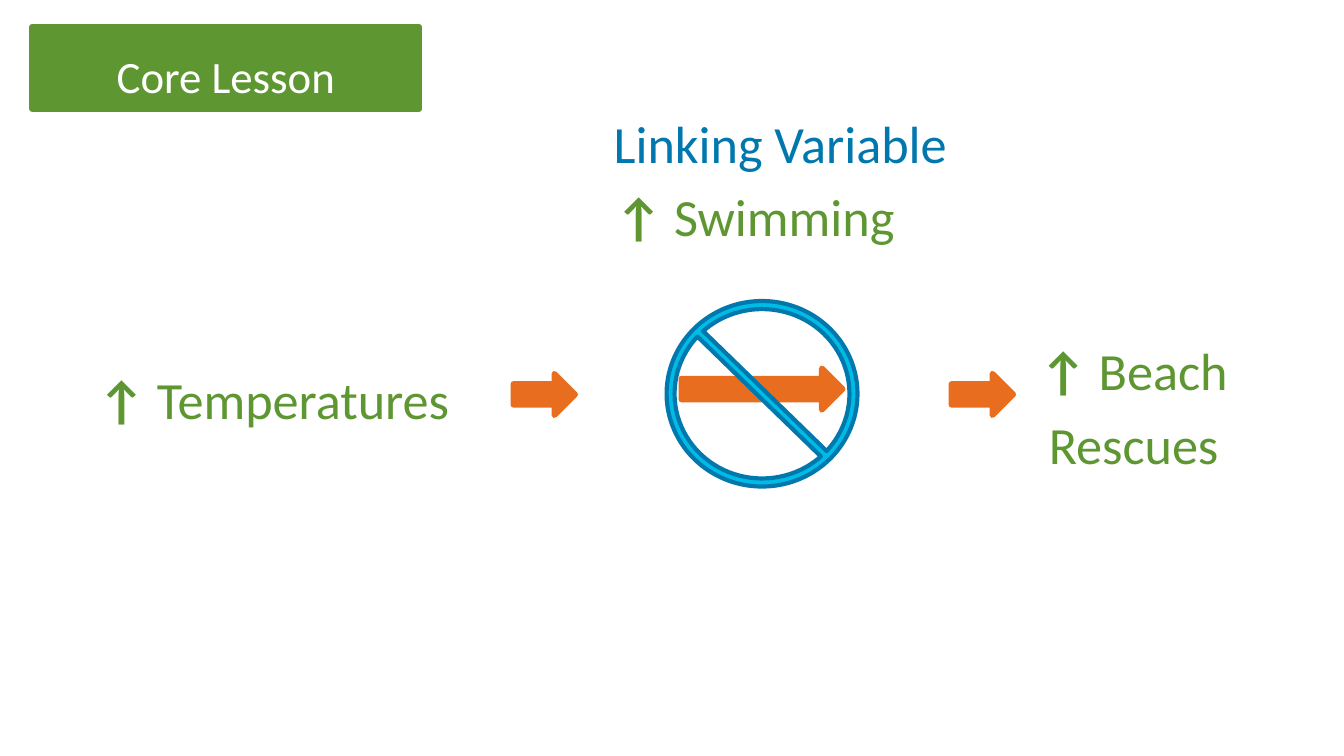
from dataclasses import dataclass

from pptx import Presentation
from pptx.dml.color import RGBColor
from pptx.enum.shapes import MSO_SHAPE
from pptx.enum.text import MSO_ANCHOR, MSO_AUTO_SIZE, PP_ALIGN
from pptx.util import Inches, Pt

RIGHT_ARROW = MSO_SHAPE.RIGHT_ARROW
NO_SYMBOL = MSO_SHAPE.NO_SYMBOL
CENTER = PP_ALIGN.CENTER
BOTTOM = MSO_ANCHOR.BOTTOM
NO_AUTOFIT = MSO_AUTO_SIZE.NONE
TITLE_ONLY = 5


@dataclass(frozen=True)
class Theme:
    font: str = "Calibri"
    green: RGBColor = RGBColor(0x5E, 0x97, 0x32)
    blue: RGBColor = RGBColor(0x00, 0x78, 0xAE)
    cyan: RGBColor = RGBColor(0x00, 0xBC, 0xE4)
    orange: RGBColor = RGBColor(0xE8, 0x6D, 0x1F)
    white: RGBColor = RGBColor(0xFF, 0xFF, 0xFF)
    title_size: Pt = Pt(24)
    label_size: Pt = Pt(28)
    line_gap: Pt = Pt(5.6)


theme = Theme()


def paint(shape, fill, line, width):
    shape.fill.solid()
    shape.fill.fore_color.rgb = fill
    shape.line.color.rgb = line
    shape.line.width = Pt(width)
    shape.shadow.inherit = False


def format_text(paragraph, size, color):
    paragraph.alignment = CENTER
    for span in paragraph.runs:
        span.font.name = theme.font
        span.font.size = size
        span.font.color.rgb = color


deck = Presentation()
deck.slide_width = Inches(10)
deck.slide_height = deck.slide_width * 9 // 16
page = deck.slides.add_slide(deck.slide_layouts[TITLE_ONLY])

# Title banner
title = page.shapes.title
title.left, title.top = Inches(0.24), Inches(0.2)
title.width, title.height = Inches(2.88), Inches(0.61)
paint(title, theme.green, theme.green, 3)
title.text_frame.text = "Core Lesson"
title.text_frame.auto_size = NO_AUTOFIT
title.text_frame.vertical_anchor = BOTTOM
format_text(title.text_frame.paragraphs[0], theme.title_size, theme.white)

# Variables: left, top, width, height, colour, lines
labels = [
    (3.42, 0.78, 4.77, 0.36, theme.blue, ["Linking Variable"]),
    (0.17, 2.68, 3.73, 0.36, theme.green, ["↑ Temperatures"]),
    (7.16, 2.47, 2.55, 1.12, theme.green, ["↑ Beach", "Rescues"]),
    (3.23, 1.32, 4.77, 0.36, theme.green, ["↑ Swimming"]),
]
for left, top, width, height, color, lines in labels:
    box = page.shapes.add_textbox(
        Inches(left), Inches(top), Inches(width), Inches(height))
    frame = box.text_frame
    frame.word_wrap = True
    frame.text = "\n".join(lines)
    for index, paragraph in enumerate(frame.paragraphs):
        if paragraph.text.startswith("↑"):
            rising = paragraph.runs[0]
            name = paragraph.add_run()
            name.text = rising.text[1:]
            rising.text = "↑"
            rising.font.bold = True
        if index:
            paragraph.space_before = theme.line_gap
        format_text(paragraph, theme.label_size, color)

# Causal chain: left, top, width of each arrow
for left, top, width in [(5.07, 2.74, 1.2), (3.82, 2.78, 0.46), (7.08, 2.78, 0.46)]:
    arrow = page.shapes.add_shape(
        RIGHT_ARROW, Inches(left), Inches(top), Inches(width), Inches(0.31))
    paint(arrow, theme.orange, theme.orange, 3)

# Blocked middle link
block = page.shapes.add_shape(
    NO_SYMBOL, Inches(4.96), Inches(2.24), Inches(1.42), Inches(1.38))
block.adjustments[0] = 0.043
paint(block, theme.cyan, theme.blue, 2.25)

deck.save("out.pptx")
